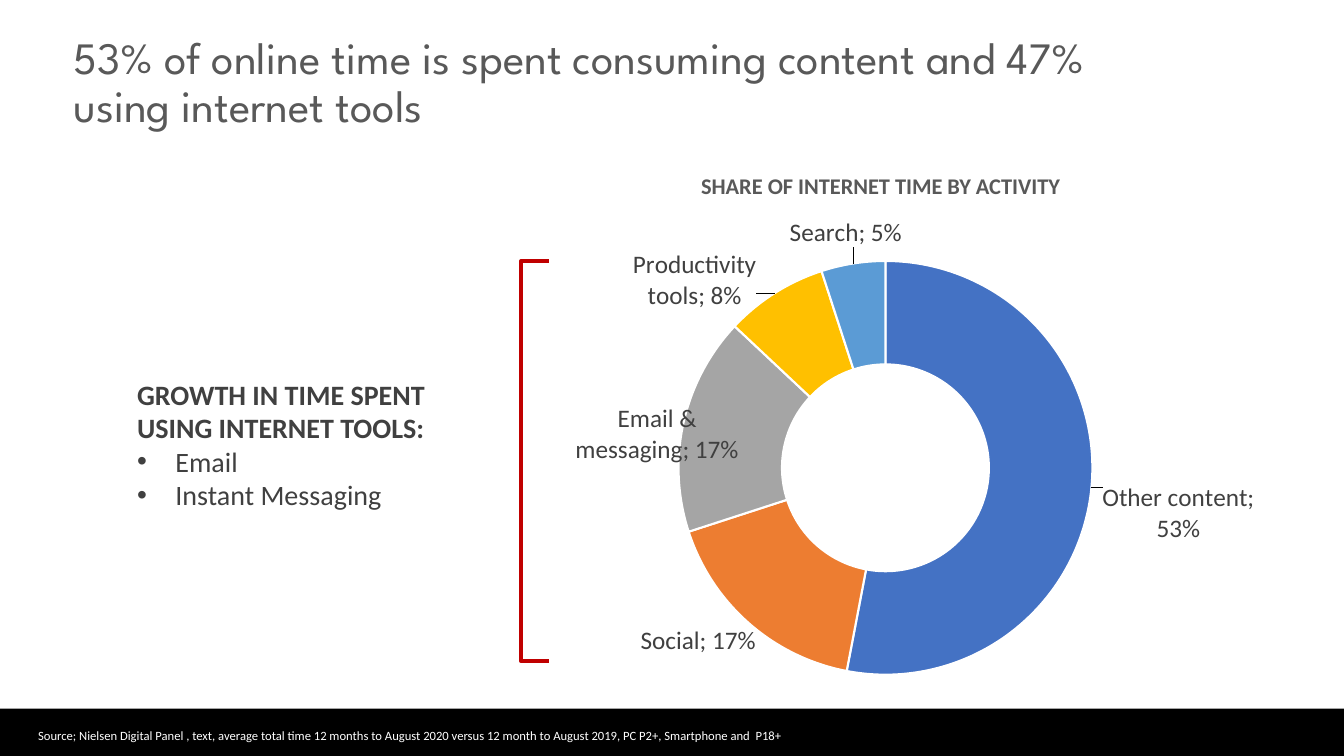
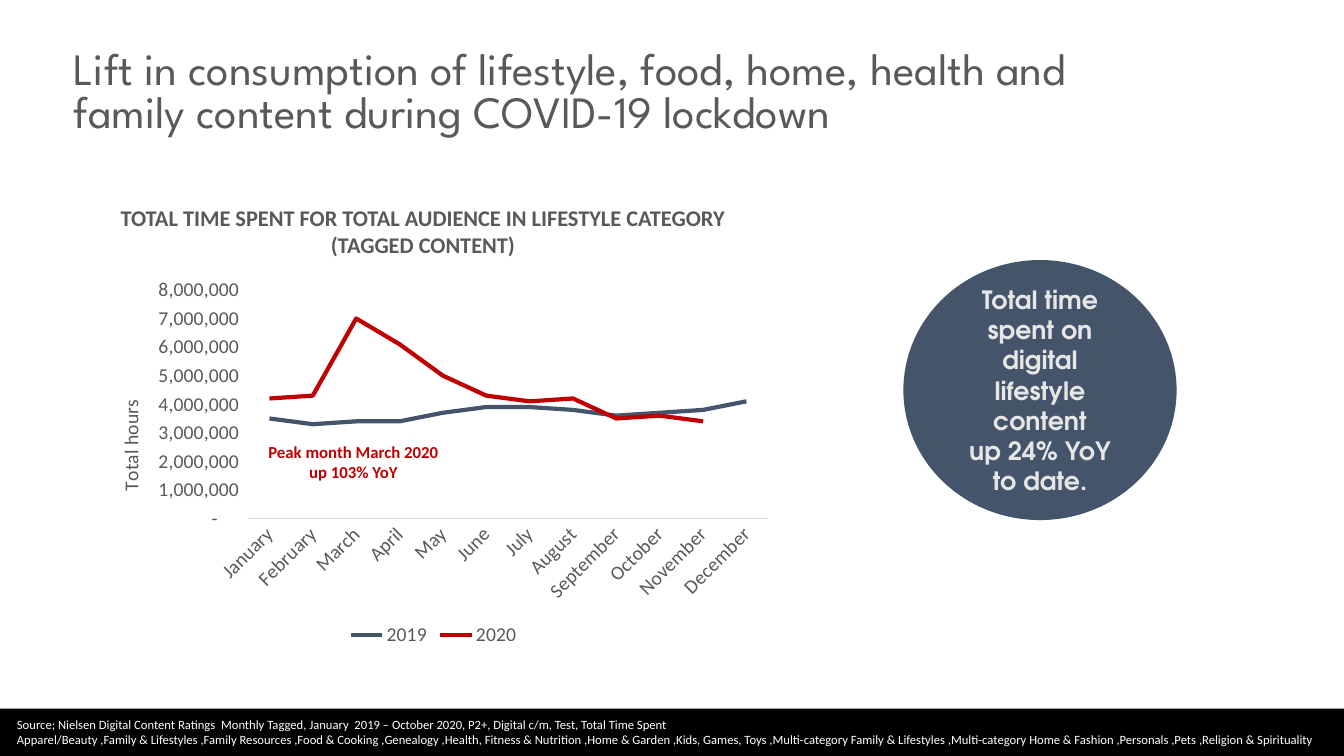
from copy import deepcopy

from lxml import etree
from pptx import Presentation
from pptx.chart.data import CategoryChartData
from pptx.dml.color import RGBColor
from pptx.enum.chart import XL_CHART_TYPE, XL_LEGEND_POSITION, XL_TICK_MARK
from pptx.enum.shapes import MSO_SHAPE
from pptx.enum.text import MSO_ANCHOR, MSO_AUTO_SIZE, PP_ALIGN
from pptx.oxml.ns import qn
from pptx.util import Inches, Pt

DOUGHNUT, LINE = XL_CHART_TYPE.DOUGHNUT, XL_CHART_TYPE.LINE
LEGEND_BOTTOM, NO_TICK = XL_LEGEND_POSITION.BOTTOM, XL_TICK_MARK.NONE
RECT, OVAL, BRACKET = MSO_SHAPE.RECTANGLE, MSO_SHAPE.OVAL, MSO_SHAPE.RIGHT_BRACKET
LEFT, CENTER, MIDDLE = PP_ALIGN.LEFT, PP_ALIGN.CENTER, MSO_ANCHOR.MIDDLE

COLORS = {
    "black": "000000", "white": "FFFFFF", "gray": "595959", "dark": "404040",
    "red": "C00000", "slate": "44546A", "light": "E7E6E6", "rule": "D9D9D9",
    "blue": "4472C4", "orange": "ED7D31", "silver": "A5A5A5",
    "gold": "FFC000", "sky": "5B9BD5",
}
BODY = "Calibri"
TITLE = {"name": "League Spartan", "size": 32, "color": "gray"}
HEADING = {"name": BODY, "size": 16, "color": "gray", "bold": True}
LIST = {"name": BODY, "size": 20, "color": "dark"}
SOURCE = {"name": BODY, "size": 9, "color": "white"}
CALLOUT = {"name": BODY, "size": 12, "color": "red", "bold": True}
BADGE = {"name": "TeX Gyre Adventor", "size": 18, "color": "light", "bold": True}
SLICE_LABEL = {"name": BODY, "size": 18, "color": "dark"}
AXIS = {"name": BODY, "size": 14, "color": "gray", "bold": False}

# category: share, slice colour, label shift as a fraction of the chart
ACTIVITIES = {
    "Other content": (0.53, "blue", (0.18, 0.06)),
    "Social": (0.17, "orange", (-0.11, 0.11)),
    "Email & messaging": (0.17, "silver", (-0.1, 0)),
    "Productivity tools": (0.08, "gold", (-0.14, -0.11)),
    "Search": (0.05, "sky", (-0.02, -0.16)),
}
MONTHS = ["January", "February", "March", "April", "May", "June", "July", "August",
          "September", "October", "November", "December"]
# hours in units of 100,000
HOURS = {
    "2019": ("slate", [35, 33, 34, 34, 37, 39, 39, 38, 36, 37, 38, 41]),
    "2020": ("red", [42, 43, 70, 61, 50, 43, 41, 42, 35, 36, 34, None]),
}
HOURS_FORMAT = '_-* #,##0_-;\\-* #,##0_-;_-* "-"??_-;_-@_'


def rgb(name):
    return RGBColor.from_string(COLORS[name])


def box(*lengths):
    return [Inches(v) for v in lengths]


def set_font(font, style):
    for key, value in style.items():
        if key == "color":
            font.color.rgb = rgb(value)
        else:
            setattr(font, key, Pt(value) if key == "size" else value)


def write(tf, lines, style, align=LEFT):
    tf.word_wrap = True
    for i, line in enumerate(lines):
        p = tf.paragraphs[0] if i == 0 else tf.add_paragraph()
        p.text = line
        p.alignment = align
        for r in p.runs:
            set_font(r.font, style)


def add_text(s, at, lines, style, align=LEFT):
    write(s.shapes.add_textbox(*box(*at)).text_frame, lines, style, align)


def add_shape(s, kind, at, fill=None, line=None):
    shape = s.shapes.add_shape(kind, *box(*at))
    shape.shadow.inherit = False
    if fill:
        shape.fill.solid()
        shape.fill.fore_color.rgb = rgb(fill)
    else:
        shape.fill.background()
    if line:
        shape.line.color.rgb = rgb(line)
        shape.line.width = Pt(3)
    else:
        shape.line.fill.background()
    return shape


def place(holder, at):
    holder.left, holder.top, holder.width, holder.height = box(*at)
    holder.text_frame.auto_size = MSO_AUTO_SIZE.NONE


def add_title(s, text, height, spacing):
    place(s.shapes.title, (0.63, 0.24, 10.95, height))
    tf = s.shapes.title.text_frame
    tf.vertical_anchor = MIDDLE
    write(tf, [text], TITLE)
    tf.paragraphs[0].line_spacing = spacing


def fill_list(holder, at, heading, items):
    """Write a bold heading with bulleted items below it."""
    place(holder, at)
    tf = holder.text_frame
    write(tf, [heading, *items], LIST)
    for i, p in enumerate(tf.paragraphs):
        p.space_before = Pt(0)
        indent = Inches(0.38) if i else 0
        pPr = p._p.get_or_add_pPr()
        pPr.set("marL", str(indent))
        pPr.set("indent", str(-indent))
        if i:
            etree.SubElement(pPr, qn("a:buFont")).set("typeface", "Arial")
            etree.SubElement(pPr, qn("a:buChar")).set("char", "•")
        else:
            etree.SubElement(pPr, qn("a:buNone"))
            p.runs[0].font.bold = True


def add_master_band(prs, s):
    """Draw the footer band and move it to the master, behind everything."""
    band = add_shape(s, RECT, (0, 7.03, 13.33, 0.47), "black")
    prs.slide_master.shapes._spTree.insert(2, band._element)


def set_layout(parent, index, **values):
    """Give a chart part a manual layout, as its child number index."""
    for old in parent.findall(qn("c:layout")):
        parent.remove(old)
    layout = etree.Element(qn("c:layout"))
    manual = etree.SubElement(layout, qn("c:manualLayout"))
    for key, value in values.items():
        etree.SubElement(manual, qn(f"c:{key}")).set("val", str(value))
    parent.insert(index, layout)


def set_plot_area(chart, x, y, w, h):
    set_layout(chart._chartSpace.chart.plotArea, 0, layoutTarget="inner",
               xMode="edge", yMode="edge", x=x, y=y, w=w, h=h)


def add_chart(s, kind, at, categories, series, number_format):
    data = CategoryChartData(number_format=number_format)
    data.categories = categories
    for name, values in series.items():
        data.add_series(name, values)
    chart = s.shapes.add_chart(kind, *box(*at), data).chart
    chart.has_title = False
    set_font(chart.font, {"name": BODY, "size": 10, "color": "black"})
    return chart


def shift_labels(labels, shifts):
    """Move each slice label off its default place."""
    dLbls = labels._element
    leader = dLbls.find(qn("c:showLeaderLines"))
    separator = etree.Element(qn("c:separator"))
    separator.text = "; "
    if leader is None:
        dLbls.append(separator)
    else:
        leader.addprevious(separator)
    shared = [e for e in dLbls if e is not leader]
    for i, (x, y) in enumerate(shifts):
        dLbl = etree.Element(qn("c:dLbl"))
        etree.SubElement(dLbl, qn("c:idx")).set("val", str(i))
        dLbl.extend(deepcopy(e) for e in shared)
        set_layout(dLbl, 1, x=x, y=y)
        dLbls.insert(i, dLbl)


def add_activity_chart(s):
    shares, colors, shifts = zip(*ACTIVITIES.values())
    chart = add_chart(s, DOUGHNUT, (5.7, 1.85, 7.63, 5.1), list(ACTIVITIES),
                      {"Series 1": shares}, "0%")
    chart.has_legend = False
    set_plot_area(chart, 0.135, 0.145, 0.538, 0.805)
    plot = chart.plots[0]
    plot.vary_by_categories = True
    plot._element.find(qn("c:holeSize")).set("val", "40")
    ring = plot.series[0]
    for i, color in enumerate(colors):
        fmt = ring.points[i].format
        fmt.fill.solid()
        fmt.fill.fore_color.rgb = rgb(color)
        fmt.line.color.rgb = rgb("white")
        fmt.line.width = Pt(1.5)
    labels = ring.data_labels
    labels.show_value = labels.show_category_name = True
    labels.number_format, labels.number_format_is_linked = "0%", False
    set_font(labels.font, SLICE_LABEL)
    shift_labels(labels, shifts)


def add_hours_chart(s):
    series = {year: [v and v * 100000 for v in values]
              for year, (_, values) in HOURS.items()}
    chart = add_chart(s, LINE, (0.85, 2.68, 6.9, 3.78), MONTHS, series, HOURS_FORMAT)
    set_plot_area(chart, 0.233, 0.052, 0.748, 0.6)
    chart.plots[0].vary_by_categories = False
    for line, (color, _) in zip(chart.plots[0].series, HOURS.values()):
        line.smooth = False
        line.format.line.color.rgb = rgb(color)
        line.format.line.width = Pt(3)
    chart.has_legend = True
    chart.legend.position = LEGEND_BOTTOM
    chart.legend.include_in_layout = False
    set_font(chart.legend.font, AXIS)

    months, hours = chart.category_axis, chart.value_axis
    for axis in (months, hours):
        axis.major_tick_mark = axis.minor_tick_mark = NO_TICK
        axis.has_major_gridlines = False
        set_font(axis.tick_labels.font, AXIS)
    months.format.line.color.rgb = rgb("rule")
    months.format.line.width = Pt(0.75)
    months._element.find(qn("c:txPr")).find(qn("a:bodyPr")).set("rot", "-2700000")
    hours.format.line.fill.background()
    hours.minimum_scale, hours.maximum_scale, hours.major_unit = 0, 8000000, 1000000
    hours.tick_labels.number_format = HOURS_FORMAT
    hours.tick_labels.number_format_is_linked = False
    write(hours.axis_title.text_frame, ["Total hours"], AXIS, CENTER)
    set_layout(hours.axis_title._element, 1, xMode="edge", yMode="edge", x=0.04, y=0.33)


def build_activity_slide(s):
    add_title(s, "53% of online time is spent consuming content and 47% using internet tools",
              1.19, 0.9)
    add_activity_chart(s)
    add_text(s, (4.92, 1.66, 7.63, 0.37), ["SHARE OF INTERNET TIME BY ACTIVITY"],
             HEADING, CENTER)
    bracket = add_shape(s, BRACKET, (5.17, 2.59, 0.27, 3.97), line="red")
    bracket.rotation = 180
    bracket.adjustments[0] = 0
    fill_list(s.placeholders[1], (1.26, 3.69, 3.33, 1.45),
              "GROWTH IN TIME SPENT USING INTERNET TOOLS:", ["Email", "Instant Messaging"])
    add_text(s, (0.28, 7.17, 7.87, 0.25),
             ["Source; Nielsen Digital Panel , text, average total time 12 months to August 2020 "
              "versus 12 month to August 2019, PC P2+, Smartphone and  P18+"], SOURCE)


def build_lifestyle_slide(s):
    add_title(s, "Lift in consumption of lifestyle, food, home, health and family content "
              "during COVID-19 lockdown", 1.39, 0.8)
    add_hours_chart(s)
    add_text(s, (0.63, 1.98, 7.13, 0.64),
             ["TOTAL TIME SPENT FOR TOTAL AUDIENCE IN LIFESTYLE CATEGORY", "(TAGGED CONTENT)"],
             HEADING, CENTER)
    badge = add_shape(s, OVAL, (8.96, 2.58, 2.71, 2.58), "slate")
    badge.text_frame.vertical_anchor = MIDDLE
    write(badge.text_frame,
          ["Total time spent on digital\nlifestyle content\nup 24% YoY\nto date."], BADGE, CENTER)
    add_text(s, (2.55, 4.33, 1.91, 0.5), ["Peak month March 2020 up 103% YoY"], CALLOUT, CENTER)
    add_text(s, (0.07, 7.06, 13.24, 0.4),
             ["Source; Nielsen Digital Content Ratings  Monthly Tagged, January  2019 – October "
              "2020, P2+, Digital c/m, Test, Total Time Spent\n"
              "Apparel/Beauty ,Family & Lifestyles ,Family Resources ,Food & Cooking ,Genealogy "
              ",Health, Fitness & Nutrition ,Home & Garden ,Kids, Games, Toys ,Multi-category "
              "Family & Lifestyles ,Multi-category Home & Fashion ,Personals ,Pets ,Religion & "
              "Spirituality"], SOURCE)


def main():
    prs = Presentation()
    prs.slide_width, prs.slide_height = box(13.33, 7.5)
    content, title_only = prs.slide_layouts[1], prs.slide_layouts[5]
    activity = prs.slides.add_slide(content)
    add_master_band(prs, activity)
    build_activity_slide(activity)
    build_lifestyle_slide(prs.slides.add_slide(title_only))
    prs.save("out.pptx")


if __name__ == "__main__":
    main()
